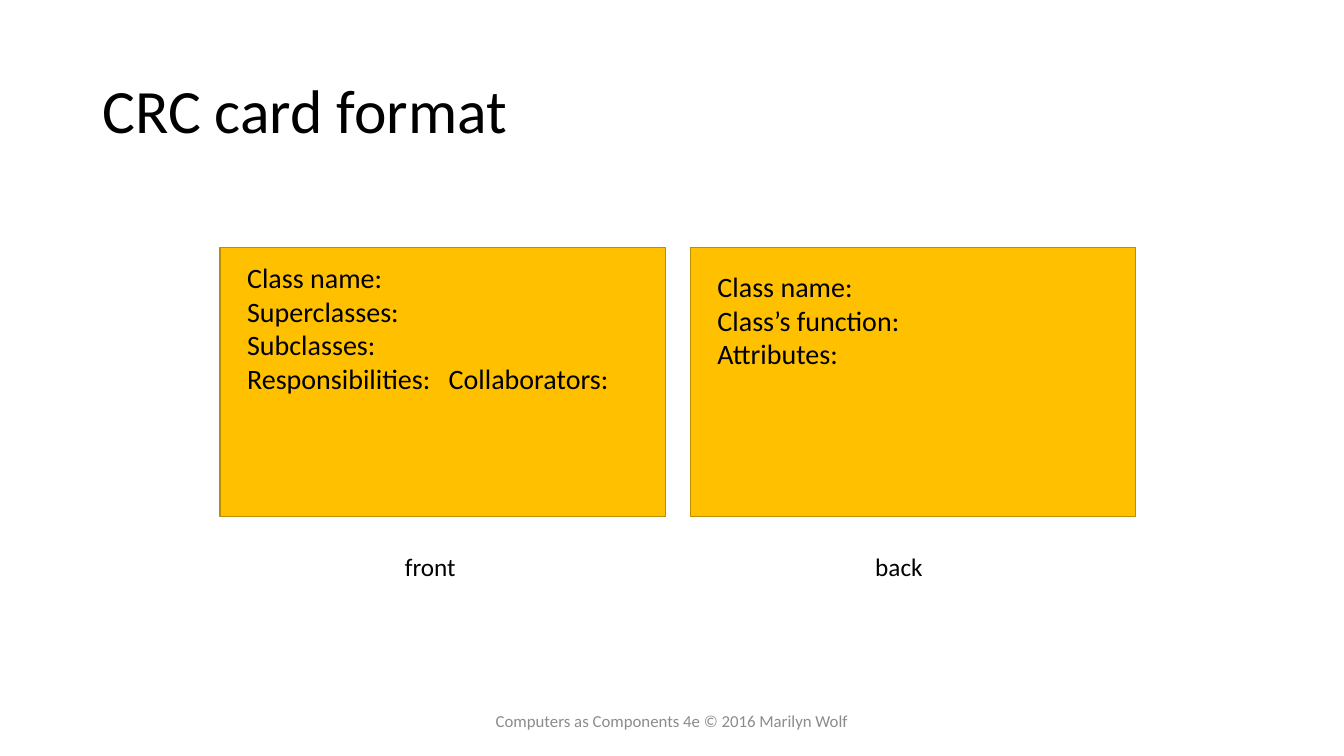
import pptx
import pptx.dml.color
import pptx.enum.shapes
import pptx.enum.text
import pptx.util

Pt = pptx.util.Pt
ANCHOR = pptx.enum.text.MSO_ANCHOR
ALIGN = pptx.enum.text.PP_ALIGN

# Content
TITLE = "CRC card format"
FOOTER = "Computers as Components 4e © 2016 Marilyn Wolf"
CARDS = [
    {
        "caption": "front",
        "text_top": 182.7,
        "fields": [
            "Class name:",
            "Superclasses:",
            "Subclasses:",
            "Responsibilities:\tCollaborators:",
        ],
    },
    {
        "caption": "back",
        "text_top": 188.9,
        "fields": ["Class name:", "Class’s function:", "Attributes:"],
    },
]

# Style and layout, in points
COLORS = {"text": "000000", "card": "FFC000", "edge": "BD8E00", "footer": "8C8C8C"}
FONT = "Calibri"
CARD_LEFT, CARD_TOP, CARD_WIDTH, CARD_HEIGHT = 157, 176.6, 318.2, 192.2
CARD_PITCH = 336
TEXT_INSET, FIELD_WIDTH, FIELD_LINE = 12.4, 273, 24
CAPTION_OFFSET, CAPTION_TOP = 125.1, 390.4


def color(name):
    return pptx.dml.color.RGBColor.from_string(COLORS[name])


def add_text(page, lines, left, top, width, height, *, size, fill="text",
             anchor=ANCHOR.TOP, align=ALIGN.LEFT, spacing=1.0, wrap=False):
    box = page.shapes.add_textbox(Pt(left), Pt(top), Pt(width), Pt(height))
    frame = box.text_frame
    frame.word_wrap = wrap
    frame.vertical_anchor = anchor
    for index, line in enumerate(lines):
        para = frame.add_paragraph() if index else frame.paragraphs[0]
        para.alignment = align
        para.line_spacing = spacing
        span = para.add_run()
        span.text = line
        span.font.name = FONT
        span.font.size = Pt(size)
        span.font.color.rgb = color(fill)


def add_card(page, card, left):
    rectangle = page.shapes.add_shape(
        pptx.enum.shapes.MSO_SHAPE.RECTANGLE,
        Pt(left), Pt(CARD_TOP), Pt(CARD_WIDTH), Pt(CARD_HEIGHT))
    rectangle.shadow.inherit = False
    rectangle.fill.solid()
    rectangle.fill.fore_color.rgb = color("card")
    rectangle.line.color.rgb = color("edge")
    rectangle.line.width = Pt(1)

    fields = card["fields"]
    add_text(page, fields, left + TEXT_INSET, card["text_top"], FIELD_WIDTH,
             len(fields) * FIELD_LINE + 7.2, size=20)
    add_text(page, [card["caption"]], left + CAPTION_OFFSET, CAPTION_TOP,
             51, 29, size=18)


def main():
    deck = pptx.Presentation()
    deck.slide_width, deck.slide_height = Pt(960), Pt(540)
    page = deck.slides.add_slide(deck.slide_layouts[6])

    # Title
    add_text(page, [TITLE], 66, 28.8, 828, 104.4, size=44,
             anchor=ANCHOR.MIDDLE, spacing=0.9, wrap=True)

    # Both sides of the card
    for index, card in enumerate(CARDS):
        add_card(page, card, CARD_LEFT + index * CARD_PITCH)

    # Footer
    add_text(page, [FOOTER], 318, 500.5, 324, 28.8, size=12, fill="footer",
             anchor=ANCHOR.MIDDLE, align=ALIGN.CENTER, wrap=True)

    deck.save("out.pptx")


if __name__ == "__main__":
    main()
